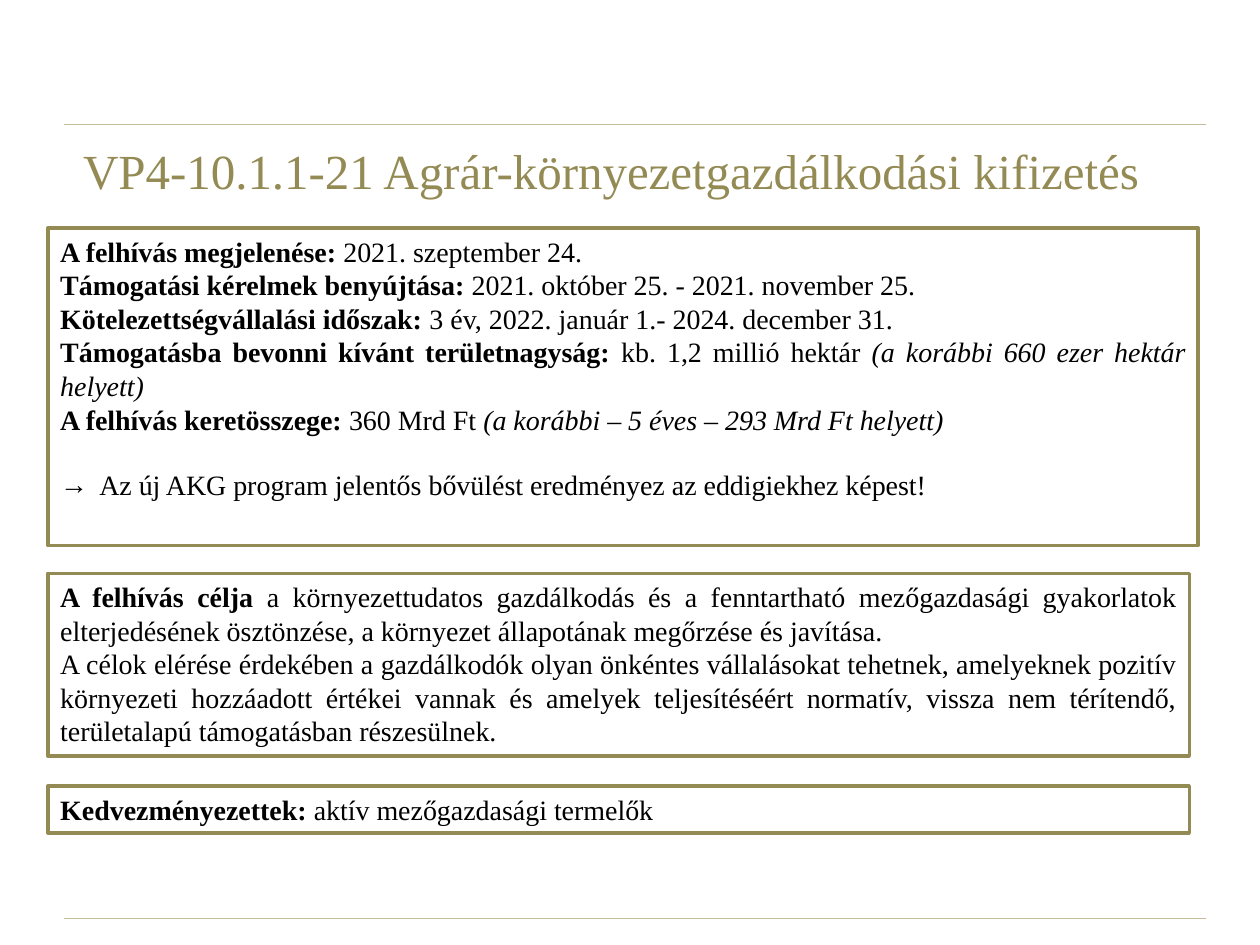
"""Builds the slide on the agri-environment payment call."""
from lxml.etree import SubElement
from pptx import Presentation
from pptx.dml.color import RGBColor
from pptx.enum.shapes import MSO_CONNECTOR as CONNECTOR, MSO_SHAPE as SHAPE
from pptx.enum.text import MSO_ANCHOR as ANCHOR, PP_ALIGN as ALIGN
from pptx.oxml.ns import qn
from pptx.util import Inches, Pt

OLIVE = RGBColor(0x94, 0x8A, 0x54)
SAND = RGBColor(0xC4, 0xBD, 0x97)
WHITE = RGBColor(0xFF, 0xFF, 0xFF)
BLACK = RGBColor(0x00, 0x00, 0x00)
FONT = "Times New Roman"

CALL_FACTS = [
    ("A felhívás megjelenése: ", "2021. szeptember 24."),
    ("Támogatási kérelmek benyújtása: ", "2021. október 25. - 2021. november 25."),
    ("Kötelezettségvállalási időszak: ", "3 év, 2022. január 1.- 2024. december 31."),
    ("Támogatásba bevonni kívánt területnagyság: ", "kb. 1,2 millió hektár ",
     "(a korábbi 660 ezer hektár helyett)"),
    ("A felhívás keretösszege: ", "360 Mrd Ft ",
     "(a korábbi – 5 éves – 293 Mrd Ft helyett)"),
]
CONCLUSION = "Az új AKG program jelentős bővülést eredményez az eddigiekhez képest!"
GOALS = [
    ("A felhívás célja ",
     "a környezettudatos gazdálkodás és a fenntartható mezőgazdasági gyakorlatok "
     "elterjedésének ösztönzése, a környezet állapotának megőrzése és javítása."),
    ("", "A célok elérése érdekében a gazdálkodók olyan önkéntes vállalásokat tehetnek, "
     "amelyeknek pozitív környezeti hozzáadott értékei vannak és amelyek teljesítéséért "
     "normatív, vissza nem térítendő, területalapú támogatásban részesülnek."),
]
BENEFICIARIES = [("Kedvezményezettek: ", "aktív mezőgazdasági termelők")]


def add_span(para, text, size=16, color=BLACK, bold=False, italic=False):
    """Add one formatted run of text to a paragraph."""
    span = para.add_run()
    span.text = text
    span.font.name = FONT
    span.font.size = Pt(size)
    span.font.color.rgb = color
    span.font.bold = bold
    span.font.italic = italic


def add_rule(page, top):
    """Draw a thin horizontal rule across the page."""
    rule = page.shapes.add_connector(
        CONNECTOR.STRAIGHT, Inches(0.51), Inches(top), Inches(9.57), Inches(top))
    rule.line.color.rgb = SAND
    rule.line.width = Pt(0.75)
    SubElement(rule.element.spPr, qn("a:effectLst"))


def set_title(page, text):
    """Place and format the title placeholder."""
    title = page.shapes.title
    title.left, title.top = Inches(0.35), Inches(0.88)
    title.width, title.height = Inches(9), Inches(0.94)
    title.text_frame.vertical_anchor = ANCHOR.MIDDLE
    para = title.text_frame.paragraphs[0]
    para.alignment = ALIGN.CENTER
    add_span(para, text, size=28, color=OLIVE)


def add_panel(page, top, height, rows, width=9.06, align=ALIGN.JUSTIFY):
    """Add a framed box whose rows hold a bold label, plain text and an italic note."""
    box = page.shapes.add_shape(
        SHAPE.RECTANGLE, Inches(0.38), Inches(top), Inches(width), Inches(height))
    box.shadow.inherit = False
    box.fill.solid()
    box.fill.fore_color.rgb = WHITE
    box.line.color.rgb = OLIVE
    box.line.width = Pt(2)
    frame = box.text_frame
    frame.word_wrap = True
    frame.vertical_anchor = ANCHOR.TOP
    for index, (label, text, *notes) in enumerate(rows):
        para = frame.add_paragraph() if index else frame.paragraphs[0]
        para.alignment = align
        if label:
            add_span(para, label, bold=True)
        add_span(para, text)
        for note in notes:
            add_span(para, note, italic=True)
    return box


def add_arrow_item(box, text):
    """Append a paragraph with an arrow bullet, set apart by one line."""
    para = box.text_frame.add_paragraph()
    para.alignment = ALIGN.JUSTIFY
    para.space_before = Pt(18.4)
    properties = para._p.get_or_add_pPr()
    properties.set("marL", str(Inches(0.31)))
    properties.set("indent", str(-Inches(0.31)))
    SubElement(properties, qn("a:buFont"), typeface=FONT)
    SubElement(properties, qn("a:buChar"), char="→")
    add_span(para, text)


def main():
    """Build and save the slide."""
    deck = Presentation()
    deck.slide_width, deck.slide_height = Inches(10), Inches(7.5)
    page = deck.slides.add_slide(deck.slide_layouts[5])
    for top in (7.29, 0.99):
        add_rule(page, top)
    set_title(page, "VP4-10.1.1-21 Agrár-környezetgazdálkodási kifizetés")
    facts = add_panel(page, 1.81, 2.52, CALL_FACTS, width=9.13)
    add_arrow_item(facts, CONCLUSION)
    add_panel(page, 4.55, 1.45, GOALS)
    add_panel(page, 6.24, 0.37, BENEFICIARIES, align=ALIGN.LEFT)
    deck.save("out.pptx")


if __name__ == "__main__":
    main()
